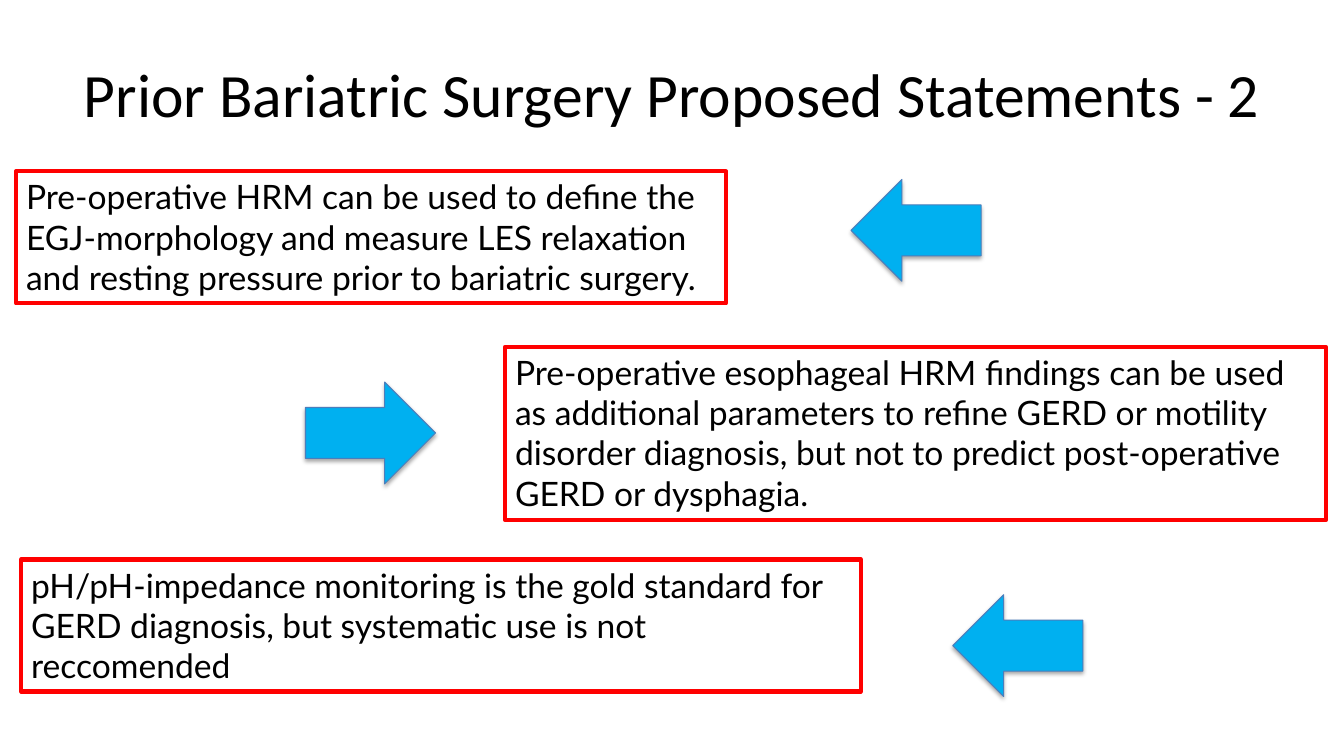
from lxml import etree
from pptx import Presentation
from pptx.dml.color import RGBColor
from pptx.enum import shapes, text
from pptx.oxml import ns
from pptx.util import Inches, Pt

TITLE = "Prior Bariatric Surgery Proposed Statements - 2"
STATEMENTS = [
    ("Pre-operative HRM can be used to define the EGJ-morphology and measure "
     "LES relaxation and resting pressure prior to bariatric surgery.",
     (0.16, 1.7, 7.04, 1.31)),
    ("Pre-operative esophageal HRM findings can be used as additional parameters "
     "to refine GERD or motility disorder diagnosis, but not to predict "
     "post-operative GERD or dysphagia.",
     (5.01, 3.44, 8.14, 1.72)),
    ("pH/pH-impedance monitoring is the gold standard for GERD diagnosis, "
     "but systematic use is not reccomended",
     (0.21, 5.55, 8.33, 1.31)),
]
ARROWS = [(3.03, 3.79, 0), (8.44, 1.78, 180), (9.45, 5.9, 180)]
ARROW_SIZE = (1.29, 1.01)

BLACK = RGBColor(0x00, 0x00, 0x00)
RED = RGBColor(0xFF, 0x00, 0x00)
SKY = RGBColor(0x00, 0xB0, 0xF0)
STEEL = RGBColor(0x4B, 0x7E, 0xBC)


def inches(*lengths):
    return [Inches(length) for length in lengths]


def style_text(frame, words, font_name, size, alignment):
    frame.text = words
    frame.word_wrap = True
    para = frame.paragraphs[0]
    para.alignment = alignment
    para.font.name = font_name
    para.font.size = Pt(size)
    para.font.color.rgb = BLACK


def add_statement(page, words, place):
    box = page.shapes.add_textbox(*inches(*place))
    box.line.color.rgb = RED
    box.line.width = Pt(3)
    style_text(box.text_frame, words, "Lato", 24, text.PP_ALIGN.LEFT)
    box.text_frame.auto_size = text.MSO_AUTO_SIZE.SHAPE_TO_FIT_TEXT


def add_shadow(shape):
    shape.shadow.inherit = False
    effects = shape._element.spPr.find(ns.qn("a:effectLst"))
    shadow = etree.SubElement(
        effects, ns.qn("a:outerShdw"), blurRad=str(Pt(3.1)),
        dist=str(Pt(1.8)), dir="5400000", rotWithShape="0")
    color = etree.SubElement(shadow, ns.qn("a:srgbClr"), val=str(BLACK))
    etree.SubElement(color, ns.qn("a:alpha"), val="35000")


def add_arrow(page, left, top, rotation):
    arrow = page.shapes.add_shape(
        shapes.MSO_SHAPE.RIGHT_ARROW, *inches(left, top, *ARROW_SIZE))
    arrow.rotation = rotation
    arrow.fill.solid()
    arrow.fill.fore_color.rgb = SKY
    arrow.line.color.rgb = STEEL
    arrow.line.width = Pt(0.75)
    add_shadow(arrow)


def main():
    """Build the slide of proposed statements and save it."""
    deck = Presentation()
    deck.slide_width, deck.slide_height = inches(13.33, 7.5)
    page = deck.slides.add_slide(deck.slide_layouts[5])

    title = page.shapes.title
    title.left, title.top, title.width, title.height = inches(0.67, 0.3, 12, 1.25)
    style_text(title.text_frame, TITLE, "Calibri", 44, text.PP_ALIGN.CENTER)
    title.text_frame.vertical_anchor = text.MSO_ANCHOR.MIDDLE

    for words, place in STATEMENTS:
        add_statement(page, words, place)
    for left, top, rotation in ARROWS:
        add_arrow(page, left, top, rotation)

    deck.save("out.pptx")


if __name__ == "__main__":
    main()
